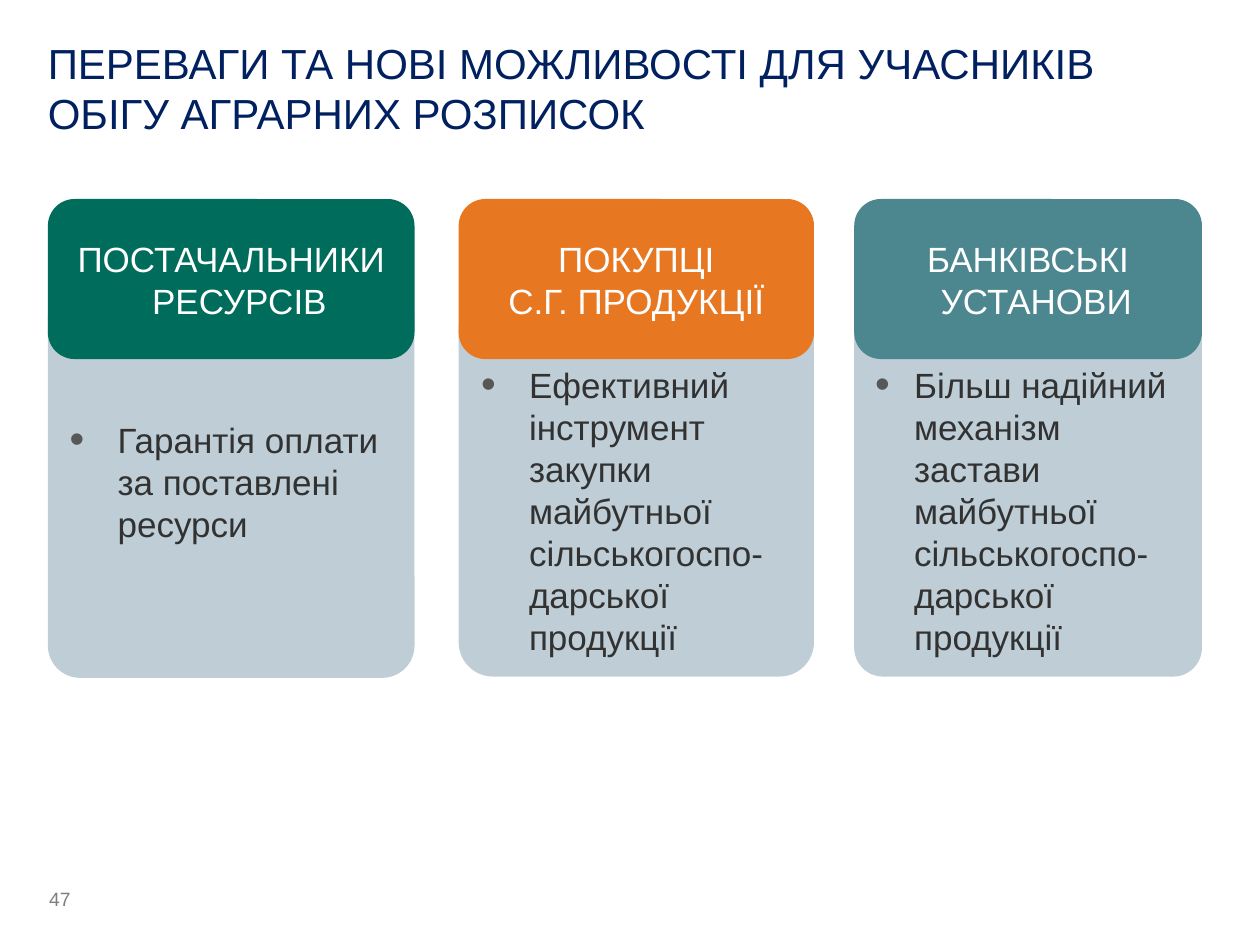
"""Build a slide on the benefits of agrarian receipts for three groups of participants."""
from lxml.etree import SubElement
from pptx import Presentation
from pptx.dml.color import RGBColor
from pptx.enum.shapes import MSO_SHAPE
from pptx.enum.text import MSO_ANCHOR, PP_ALIGN
from pptx.oxml.ns import qn
from pptx.util import Inches, Pt

COLORS = {
    "title": "002060", "number": "7F7F7F", "text": "323232", "bullet": "575757",
    "panel": "BFCED6", "white": "FFFFFF",
    "suppliers": "006C5B", "buyers": "E87722", "banks": "4C868E",
}
HEADER_TOP, HEADER_HEIGHT = 1.58, 1.27
BELOW_HEADER = 0.45
GROUPS = [
    dict(left=0.38, width=2.91, color="suppliers", heading=["ПОСТАЧАЛЬНИКИ РЕСУРСІВ"],
         benefit="Гарантія оплати за поставлені ресурси",
         top=2.26, height=3.12, radius=0.088, indent=0.38, inset=0.05),
    dict(left=3.64, width=2.82, color="buyers", heading=["ПОКУПЦІ", "С.Г. ПРОДУКЦІЇ"],
         benefit="Ефективний інструмент закупки майбутньої сільськогоспо-дарської продукції",
         top=2.33, height=3.04, radius=0.097, indent=0.38, inset=BELOW_HEADER),
    dict(left=6.78, width=2.76, color="banks", heading=["БАНКІВСЬКІ УСТАНОВИ"],
         benefit="Більш надійний механізм застави майбутньої сільськогоспо-дарської продукції",
         top=2.33, height=3.04, radius=0.083, indent=0.31, inset=BELOW_HEADER),
]


def rgb(name):
    """Return the named colour."""
    return RGBColor.from_string(COLORS[name])


def add_bullet(properties):
    """Give a paragraph a large grey round bullet."""
    color = SubElement(properties, qn("a:buClr"))
    SubElement(color, qn("a:srgbClr"), val=COLORS["bullet"])
    SubElement(properties, qn("a:buSzPct"), val="120000")
    SubElement(properties, qn("a:buFont"), typeface="Arial")
    SubElement(properties, qn("a:buChar"), char="•")


def write(frame, lines, *, size, color, align=PP_ALIGN.LEFT, indent=0, bullet=False):
    """Fill a text frame with one paragraph per line."""
    frame.word_wrap = True
    frame.vertical_anchor = MSO_ANCHOR.MIDDLE
    for index, line in enumerate(lines):
        paragraph = frame.paragraphs[0] if index == 0 else frame.add_paragraph()
        paragraph.alignment = align
        properties = paragraph._p.get_or_add_pPr()
        if indent:
            properties.set("marL", str(Inches(indent)))
            properties.set("indent", str(-Inches(indent)))
        if bullet:
            add_bullet(properties)
        run = paragraph.add_run()
        run.text = line
        run.font.name = "Arial"
        run.font.size = Pt(size)
        run.font.color.rgb = rgb(color)


def add_label(slide, left, top, width, height, text, **text_format):
    """Add a text box without margins."""
    label = slide.shapes.add_textbox(Inches(left), Inches(top), Inches(width), Inches(height))
    frame = label.text_frame
    frame.margin_left = frame.margin_right = frame.margin_top = frame.margin_bottom = 0
    write(frame, [text], **text_format)


def add_card(slide, left, top, width, height, fill, radius):
    """Add a plain rounded rectangle and return its text frame."""
    card = slide.shapes.add_shape(
        MSO_SHAPE.ROUNDED_RECTANGLE, Inches(left), Inches(top), Inches(width), Inches(height))
    card.adjustments[0] = radius
    card.shadow.inherit = False
    card.fill.solid()
    card.fill.fore_color.rgb = rgb(fill)
    card.line.fill.background()
    return card.text_frame


def add_group(slide, group):
    """Add the benefit panel of a group and the heading that overlaps it."""
    left, width = group["left"], group["width"]
    panel = add_card(slide, left, group["top"], width, group["height"], "panel", group["radius"])
    panel.margin_top = Inches(group["inset"])
    write(panel, [group["benefit"]], size=20, color="text", indent=group["indent"], bullet=True)
    header = add_card(slide, left, HEADER_TOP, width, HEADER_HEIGHT, group["color"], 0.167)
    write(header, group["heading"], size=20, color="white", align=PP_ALIGN.CENTER, indent=0.13)


def main():
    """Build and save the slide."""
    presentation = Presentation()
    presentation.slide_width, presentation.slide_height = Inches(10), Inches(7.5)
    slide = presentation.slides.add_slide(presentation.slide_layouts[6])
    add_label(slide, 0.38, 0.24, 9.23, 0.91,
              "ПЕРЕВАГИ ТА НОВІ МОЖЛИВОСТІ ДЛЯ УЧАСНИКІВ ОБІГУ АГРАРНИХ РОЗПИСОК",
              size=24, color="title")
    for group in GROUPS:
        add_group(slide, group)
    add_label(slide, 0.39, 6.94, 0.6, 0.39, "47", size=11, color="number")
    presentation.save("out.pptx")


if __name__ == "__main__":
    main()
